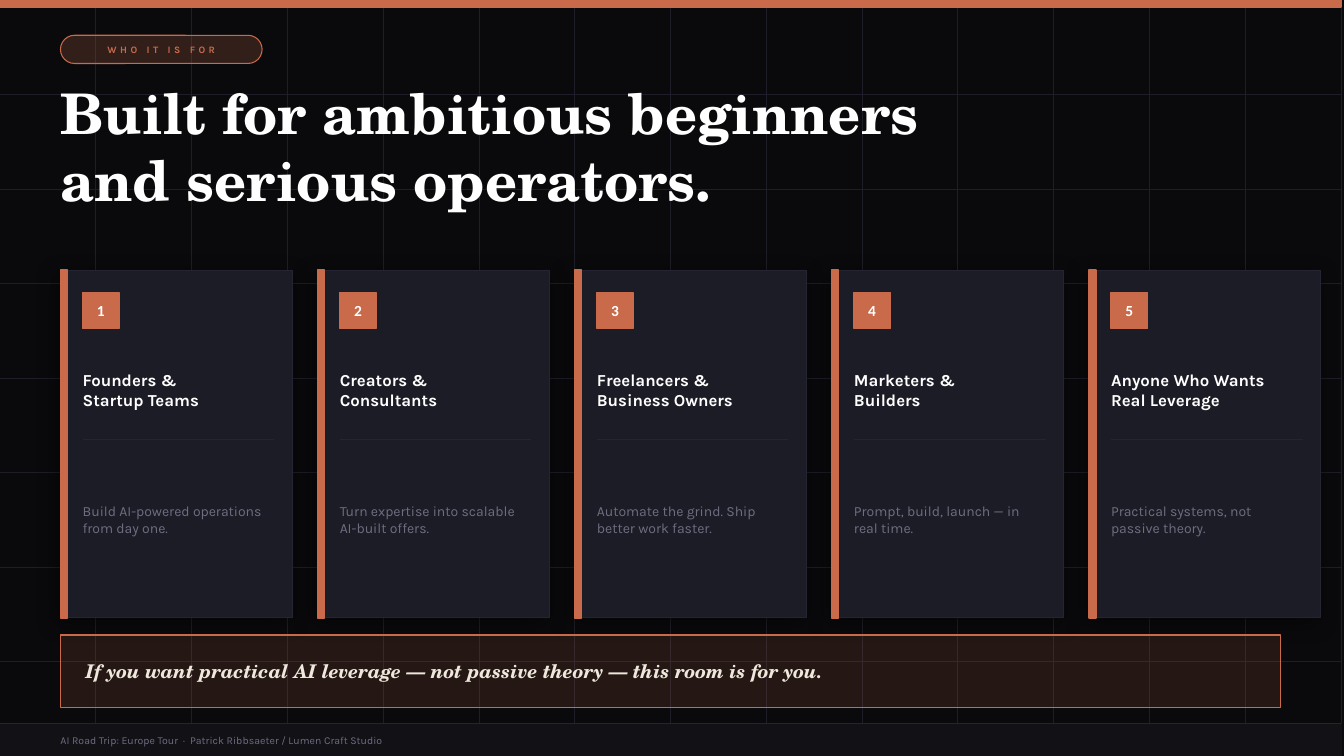
from lxml import etree
from pptx import Presentation
from pptx.dml.color import RGBColor
from pptx.enum import shapes, text
from pptx.oxml import ns
from pptx.util import Inches, Pt

COLORS = {
    "night": "0A0A0C", "grid": "1E1E28", "copper": "C96A4A", "card": "1C1C26",
    "edge": "252532", "white": "FFFFFF", "muted": "6E6E82", "cream": "EFE8DC",
    "footer": "111116", "black": "000000",
}
SERIF, SANS, DIGITS = "TeX Gyre Schola", "Karla", "Calibri"
SLIDE_W, SLIDE_H = 13.33, 7.5
BAND_W, MARGIN = 13.3, 0.6
LEFT, CENTER = text.PP_ALIGN.LEFT, text.PP_ALIGN.CENTER
TOP, MIDDLE = text.MSO_ANCHOR.TOP, text.MSO_ANCHOR.MIDDLE
RECT, PILL = shapes.MSO_SHAPE.RECTANGLE, shapes.MSO_SHAPE.ROUNDED_RECTANGLE


def rgb(name):
    return RGBColor.from_string(COLORS[name])


def add_child(parent, tag, **attributes):
    child = etree.SubElement(parent, ns.qn(tag))
    for key, value in attributes.items():
        child.set(key, str(value))
    return child


class Deck:
    def __init__(self):
        self.presentation = Presentation()
        self.presentation.slide_width = Inches(SLIDE_W)
        self.presentation.slide_height = Inches(SLIDE_H)
        self.slide = self.presentation.slides.add_slide(self.presentation.slide_layouts[6])
        background = self.slide.background.fill
        background.solid()
        background.fore_color.rgb = rgb("night")

    def line(self, x1, y1, x2, y2, color, width=0.5):
        rule = self.slide.shapes.add_connector(
            shapes.MSO_CONNECTOR.STRAIGHT, *map(Inches, (x1, y1, x2, y2)))
        rule.line.color.rgb = rgb(color)
        rule.line.width = Pt(width)
        add_child(rule.element.spPr, "a:effectLst")

    def box(self, x, y, w, h, fill, edge, width=1, kind=RECT, opacity=None):
        panel = self.slide.shapes.add_shape(kind, *map(Inches, (x, y, w, h)))
        panel.shadow.inherit = False
        panel.fill.solid()
        panel.fill.fore_color.rgb = rgb(fill)
        panel.line.color.rgb = rgb(edge)
        panel.line.width = Pt(width)
        if kind == PILL:
            panel.adjustments[0] = 0.5
        if opacity:
            tint = panel.element.spPr.find(ns.qn("a:solidFill"))[0]
            add_child(tint, "a:alpha", val=opacity * 1000)
        return panel

    def drop_shadow(self, panel):
        effects = panel.element.spPr.find(ns.qn("a:effectLst"))
        shadow = add_child(effects, "a:outerShdw", blurRad=Pt(16), dist=Pt(4),
                           dir=135 * 60000, algn="bl", rotWithShape=0)
        tint = add_child(shadow, "a:srgbClr", val=COLORS["black"])
        add_child(tint, "a:alpha", val=45000)

    def set_words(self, holder, words, size, color, font=SANS, bold=False, italic=False,
                  align=LEFT, anchor=MIDDLE, indent=0, spacing=None):
        frame = holder.text_frame
        frame.word_wrap = True
        frame.vertical_anchor = anchor
        frame.margin_left = Inches(indent)
        frame.margin_right = frame.margin_top = frame.margin_bottom = 0
        frame.text = words
        for paragraph in frame.paragraphs:
            paragraph.alignment = align
            for run in paragraph.runs:
                run.font.name = font
                run.font.size = Pt(size)
                run.font.bold = bold
                run.font.italic = italic
                run.font.color.rgb = rgb(color)
                if spacing:
                    run._r.get_or_add_rPr().set("spc", str(int(spacing * 100)))

    def label(self, x, y, w, h, words, size, color, **style):
        holder = self.slide.shapes.add_textbox(*map(Inches, (x, y, w, h)))
        self.set_words(holder, words, size, color, **style)

    def audience_card(self, x, number, title, promise):
        y, w, h = 2.68, 2.3, 3.45
        inner_x, inner_w = x + 0.22, 1.9
        self.drop_shadow(self.box(x, y, w, h, "card", "edge", 0.75))
        self.box(x, y, 0.07, h, "copper", "copper")
        badge = self.box(inner_x, 2.9, 0.36, 0.36, "copper", "copper")
        self.set_words(badge, str(number), 11, "white", font=DIGITS, bold=True, align=CENTER)
        self.label(inner_x, 3.44, inner_w, 0.85, title, 12, "white", bold=True)
        self.line(inner_x, 4.36, inner_x + inner_w, 4.36, "edge", 0.75)
        self.label(inner_x, 4.5, inner_w, 1.3, promise, 10, "muted")


AUDIENCES = [
    ("Founders &\nStartup Teams", "Build AI-powered operations from day one."),
    ("Creators &\nConsultants", "Turn expertise into scalable AI-built offers."),
    ("Freelancers &\nBusiness Owners", "Automate the grind. Ship better work faster."),
    ("Marketers &\nBuilders", "Prompt, build, launch — in real time."),
    ("Anyone Who Wants\nReal Leverage", "Practical systems, not passive theory."),
]


def main():
    deck = Deck()

    # Background grid
    for row in range(1, 8):
        y = row * SLIDE_H / 8
        deck.line(0, y, BAND_W, y, "grid")
    for column in range(1, 15):
        x = column * BAND_W / 14
        deck.line(x, 0, x, SLIDE_H, "grid")

    # Header
    deck.box(0, 0, BAND_W, 0.07, "copper", "copper")
    tag = deck.box(MARGIN, 0.35, 2, 0.28, "copper", "copper", 0.75, PILL, opacity=22)
    deck.set_words(tag, "WHO IT IS FOR", 7, "copper", bold=True, align=CENTER, spacing=2.5)
    deck.label(MARGIN, 0.78, 9.5, 1.65,
               "Built for ambitious beginners\nand serious operators.",
               40, "white", font=SERIF, bold=True, anchor=TOP)

    # Audience cards
    for index, (title, promise) in enumerate(AUDIENCES):
        deck.audience_card(MARGIN + index * 2.55, index + 1, title, promise)

    # Closing statement
    closing = deck.box(MARGIN, 6.3, 12.1, 0.72, "copper", "copper", opacity=14)
    deck.set_words(closing,
                   "If you want practical AI leverage — not passive theory — this room is for you.",
                   13.5, "cream", font=SERIF, bold=True, italic=True, indent=0.25)

    # Footer
    footer = deck.box(0, 7.18, BAND_W, 0.32, "footer", "footer")
    deck.line(0, 7.18, BAND_W, 7.18, "edge")
    deck.set_words(footer,
                   "AI Road Trip: Europe Tour  ·  Patrick Ribbsaeter / Lumen Craft Studio",
                   7.5, "muted", indent=MARGIN)

    deck.presentation.save("out.pptx")


if __name__ == "__main__":
    main()
